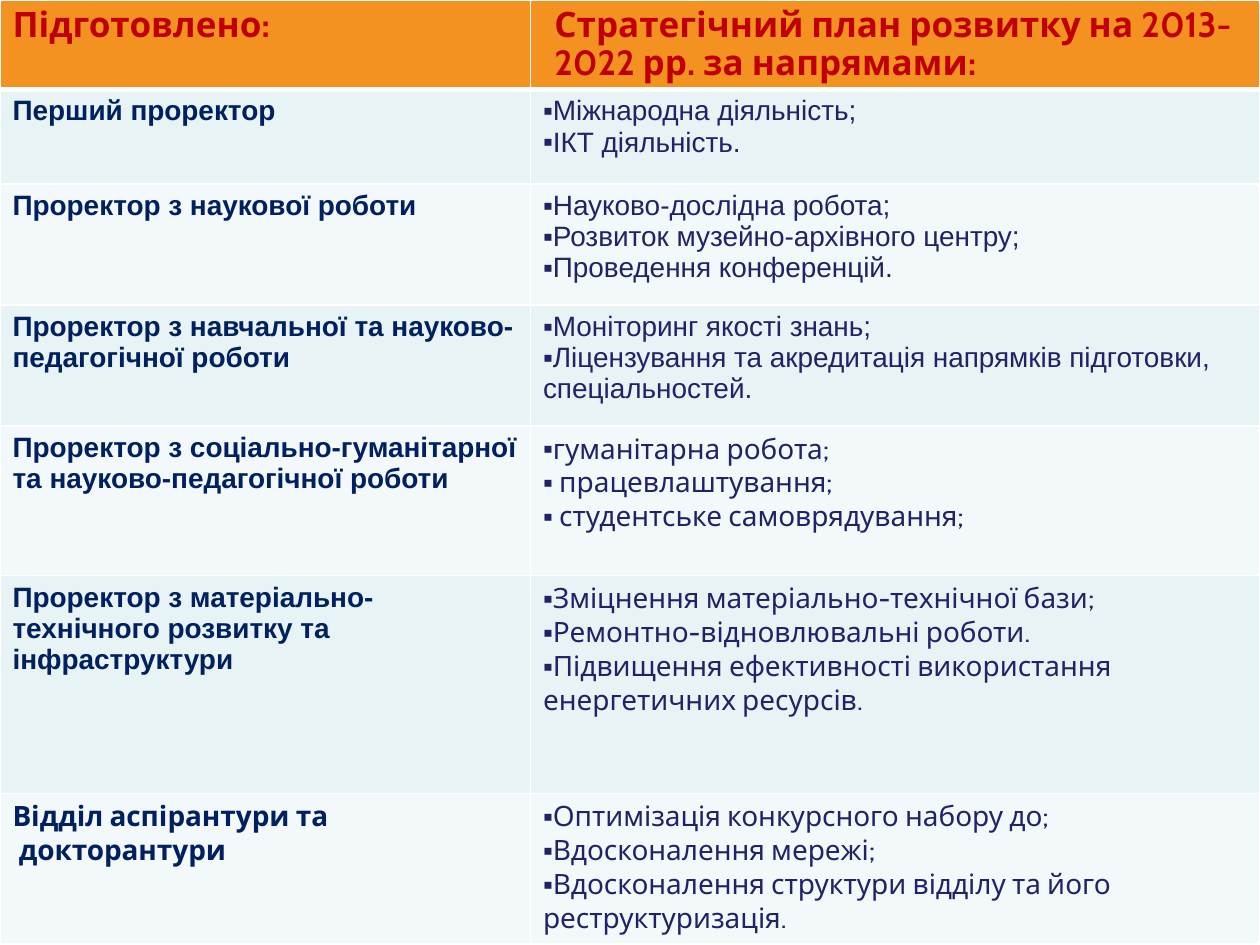
from lxml import etree
from pptx import Presentation
from pptx.dml.color import RGBColor
from pptx.oxml.ns import qn
from pptx.util import Inches, Pt

COLUMN_WIDTHS = [4.21, 5.79]
ROW_HEIGHTS = [0.71, 0.75, 0.96, 0.96, 1.19, 1.73, 1.19]
HEADER_FILL = "F39220"
BAND_FILLS = ["E7F3F4", "F3F9FA"]
BORDER_COLOR = "FFFFFF"

HEADER = {"size": Pt(20), "bold": True, "color": "C00000"}
OWNER = {"size": Pt(16), "bold": True, "color": "002060"}
TASK = {"size": Pt(16), "bold": False, "color": "222267"}

HEADINGS = [
    # text, left margin, first-line indent
    ("Підготовлено:", 0.59, -0.59),
    ("Стратегічний план розвитку на 2013-2022 рр. за напрямами:", 0.09, 0),
]
# owner font, owner lines, task font, tasks
PLANS = [
    ("Arial", ["Перший проректор"],
     "Arial", ["Міжнародна діяльність;", "ІКТ діяльність."]),
    ("Arial", ["Проректор з наукової роботи"],
     "Arial", ["Науково-дослідна робота;",
               "Розвиток музейно-архівного центру;",
               "Проведення конференцій."]),
    ("Arial", ["Проректор з навчальної та науково-педагогічної роботи"],
     "Arial", ["Моніторинг якості знань;",
               "Ліцензування та акредитація напрямків підготовки, спеціальностей."]),
    ("Arial", ["Проректор з соціально-гуманітарної та науково-педагогічної роботи"],
     "Cabin", ["гуманітарна робота;", " працевлаштування;",
               " студентське самоврядування;"]),
    ("Arial", ["Проректор з матеріально-технічного розвитку та інфраструктури"],
     "Cabin", ["Зміцнення матеріально-технічної бази;",
               "Ремонтно-відновлювальні роботи.",
               "Підвищення ефективності використання енергетичних ресурсів."]),
    ("Cabin", ["Відділ аспірантури та", " докторантури"],
     "Cabin", ["Оптимізація конкурсного набору до;", "Вдосконалення мережі;",
               "Вдосконалення структури відділу та його реструктуризація."]),
]


def rgb(color):
    return RGBColor.from_string(color)


def add_borders(cell, top=1, bottom=1):
    properties = cell._tc.get_or_add_tcPr()
    widths = {"a:lnL": 1, "a:lnR": 1, "a:lnT": top, "a:lnB": bottom}
    for index, (tag, width) in enumerate(widths.items()):
        line = etree.Element(qn(tag), w=str(Pt(width)))
        fill = etree.SubElement(line, qn("a:solidFill"))
        etree.SubElement(fill, qn("a:srgbClr"), val=BORDER_COLOR)
        properties.insert(index, line)


def fill_cell(cell, color, **borders):
    cell.fill.solid()
    cell.fill.fore_color.rgb = rgb(color)
    add_borders(cell, **borders)


def add_bullet(para):
    properties = para._p.get_or_add_pPr()
    etree.SubElement(properties, qn("a:buFont"), typeface="Arial")
    etree.SubElement(properties, qn("a:buChar"), char="▪")


def write_lines(cell, lines, font_name, style, bullets=False):
    frame = cell.text_frame
    for index, text in enumerate(lines):
        para = frame.add_paragraph() if index else frame.paragraphs[0]
        if bullets:
            add_bullet(para)
        span = para.add_run()
        span.text = text
        span.font.name = font_name
        for name, value in style.items():
            if name == "color":
                span.font.color.rgb = rgb(value)
            else:
                setattr(span.font, name, value)


def write_heading(cell, text, margin, indent):
    fill_cell(cell, HEADER_FILL, bottom=3)
    write_lines(cell, [text], "Cabin", HEADER)
    para = cell.text_frame.paragraphs[0]
    para.line_spacing = 0.9
    properties = para._p.get_or_add_pPr()
    properties.set("marL", str(Inches(margin)))
    properties.set("indent", str(Inches(indent)))


def add_plan_table(page):
    table = page.shapes.add_table(
        len(ROW_HEIGHTS), len(COLUMN_WIDTHS), 0, 0, Inches(10), Inches(7.5)).table
    for column, width in zip(table.columns, COLUMN_WIDTHS):
        column.width = Inches(width)
    for row, height in zip(table.rows, ROW_HEIGHTS):
        row.height = Inches(height)
    return table


def main():
    deck = Presentation()
    deck.slide_width, deck.slide_height = Inches(10), Inches(7.5)
    page = deck.slides.add_slide(deck.slide_layouts[6])
    table = add_plan_table(page)
    for column, heading in enumerate(HEADINGS):
        write_heading(table.cell(0, column), *heading)
    for row, (owner_font, owner, task_font, tasks) in enumerate(PLANS, start=1):
        owner_cell, task_cell = table.cell(row, 0), table.cell(row, 1)
        for cell in (owner_cell, task_cell):
            fill_cell(cell, BAND_FILLS[(row - 1) % 2], top=3 if row == 1 else 1)
        write_lines(owner_cell, owner, owner_font, OWNER)
        write_lines(task_cell, tasks, task_font, TASK, bullets=True)
    deck.save("out.pptx")


if __name__ == "__main__":
    main()
